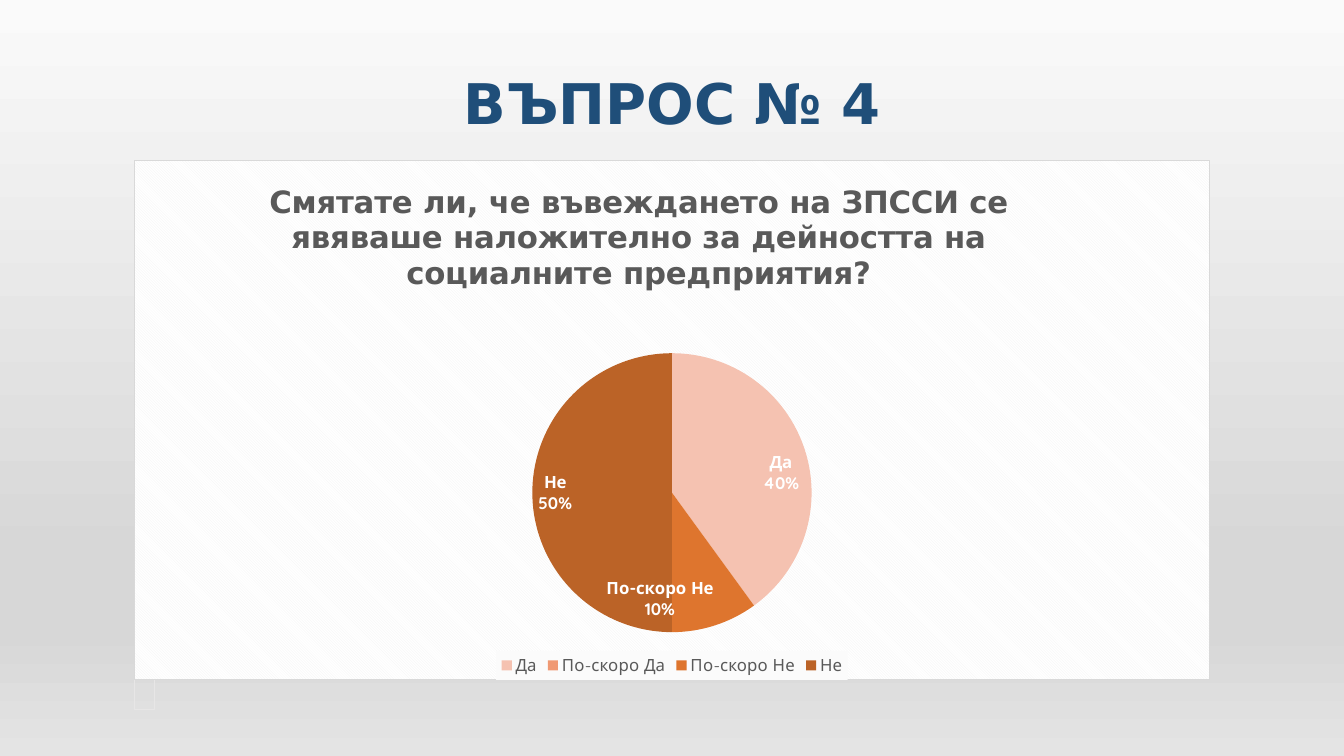
from lxml.etree import SubElement
from pptx import Presentation
from pptx.chart.data import CategoryChartData
from pptx.dml.color import RGBColor
from pptx.enum.chart import XL_CHART_TYPE as ChartType
from pptx.enum.chart import XL_LABEL_POSITION as LabelPosition
from pptx.enum.chart import XL_LEGEND_POSITION as LegendPosition
from pptx.enum.shapes import MSO_SHAPE as Shape
from pptx.enum.text import MSO_ANCHOR as Anchor
from pptx.enum.text import PP_ALIGN as Align
from pptx.oxml import parse_xml
from pptx.oxml.ns import nsdecls, qn
from pptx.util import Pt

WIDTH, HEIGHT = 960, 540


def color(value):
    return RGBColor.from_string(value)


def solid(value):
    return f'<a:solidFill><a:srgbClr val="{value}"/></a:solidFill>'


def place(element, **fractions):
    for old in element.findall(qn("c:layout")):
        element.remove(old)
    layout = parse_xml(f'<c:layout {nsdecls("c")}/>')
    manual = SubElement(layout, qn("c:manualLayout"))
    if "w" in fractions:
        SubElement(manual, qn("c:layoutTarget")).set("val", "inner")
    for axis in "xy":
        SubElement(manual, qn(f"c:{axis}Mode")).set("val", "edge")
    for key, value in fractions.items():
        SubElement(manual, qn(f"c:{key}")).set("val", str(value))
    return layout


class Deck:
    heading_font = "DejaVu Sans"
    chart_font = "Quicksand"
    heading_color = "1F4E79"
    text_color = "595959"

    def __init__(self):
        self.deck = Presentation()
        self.deck.slide_width, self.deck.slide_height = Pt(WIDTH), Pt(HEIGHT)
        self.slide = self.deck.slides.add_slide(self.deck.slide_layouts[6])

    def style(self, font, name, size, value, bold=False):
        font.name, font.size, font.bold = name, Pt(size), bold
        font.color.rgb = color(value)

    def rectangle(self, left, top, width, height, line=None):
        box = self.slide.shapes.add_shape(
            Shape.RECTANGLE, Pt(left), Pt(top), Pt(width), Pt(height))
        box.shadow.inherit = False
        box.fill.background()
        if line:
            box.line.color.rgb = color(line)
            box.line.width = Pt(0.75)
        else:
            box.line.fill.background()
        return box

    def backdrop(self, stops):
        box = self.rectangle(0, 0, WIDTH, HEIGHT)
        marks = "".join(
            f'<a:gs pos="{position * 1000}"><a:srgbClr val="{value}"/></a:gs>'
            for position, value in stops)
        gradient = parse_xml(
            f'<a:gradFill {nsdecls("a")} rotWithShape="1"><a:gsLst>{marks}</a:gsLst>'
            '<a:lin ang="5400000" scaled="0"/></a:gradFill>')
        properties = box._element.spPr
        properties.replace(properties.find(qn("a:noFill")), gradient)

    def heading(self, text, left, top, width, height):
        frame = self.slide.shapes.add_textbox(
            Pt(left), Pt(top), Pt(width), Pt(height)).text_frame
        frame.word_wrap = True
        frame.vertical_anchor = Anchor.BOTTOM
        paragraph = frame.paragraphs[0]
        paragraph.text = text
        paragraph.alignment = Align.CENTER
        paragraph.line_spacing = 0.9
        self.style(paragraph.font, self.heading_font, 40, self.heading_color, True)

    def pie(self, question, answers, left, top, width, height):
        data = CategoryChartData()
        data.categories = [answer for answer, _, _ in answers]
        data.add_series("Series 1", [share for _, share, _ in answers])
        chart = self.slide.shapes.add_chart(
            ChartType.PIE, Pt(left), Pt(top), Pt(width), Pt(height), data).chart
        self.style(chart.font, self.chart_font, 10, "000000")

        title = chart.chart_title
        paragraph = title.text_frame.paragraphs[0]
        paragraph.text = question
        paragraph.alignment = Align.CENTER
        self.style(paragraph.font, self.heading_font, 22, self.text_color, True)
        title.include_in_layout = False
        title._element.find(qn("c:tx")).addnext(place(title._element, x=0.12, y=0.03))

        chart.has_legend = True
        legend = chart.legend
        legend.position = LegendPosition.BOTTOM
        legend.include_in_layout = False
        self.style(legend.font, self.chart_font, 12, self.text_color)
        legend._element.find(qn("c:txPr")).addprevious(parse_xml(
            f'<c:spPr {nsdecls("c", "a")}>{solid("FBFBFB")}</c:spPr>'))

        plot = chart.plots[0]
        plot.vary_by_categories = True
        area = plot._element.getparent()
        area.insert(0, place(area, x=0.37, y=0.37, w=0.26, h=0.54))
        series = plot.series[0]
        for index, (_, _, value) in enumerate(answers):
            slice_format = series.points[index].format
            slice_format.fill.solid()
            slice_format.fill.fore_color.rgb = color(value)
            slice_format.line.fill.background()

        plot.has_data_labels = True
        labels = plot.data_labels
        labels.show_value = False
        labels.show_percentage = True
        labels.show_category_name = True
        labels.number_format, labels.number_format_is_linked = "0%", False
        labels.position = LabelPosition.INSIDE_END
        self.style(labels.font, self.chart_font, 12, "FFFFFF", True)

        chart._chartSpace.find(qn("c:chart")).addnext(parse_xml(
            f'<c:spPr {nsdecls("c", "a")}><a:pattFill prst="dkDnDiag">'
            '<a:fgClr><a:srgbClr val="F2F2F2"/></a:fgClr>'
            '<a:bgClr><a:srgbClr val="FFFFFF"/></a:bgClr></a:pattFill>'
            f'<a:ln w="{Pt(0.75)}">{solid("D9D9D9")}</a:ln></c:spPr>'))


def main():
    survey = Deck()
    survey.backdrop([(0, "FAFAFA"), (74, "D7D7D7"), (83, "D7D7D7"), (100, "E4E4E4")])
    survey.heading("ВЪПРОС № 4", 96, 32.4, 768, 69)
    survey.rectangle(96, 474, 14.4, 33, line="E7E6E6")
    survey.pie(
        "Смятате ли, че въвеждането на ЗПССИ се явяваше наложително "
        "за дейността на социалните предприятия?",
        [("Да", 40, "F5C2B1"), ("По-скоро Да", 0, "F09973"),
         ("По-скоро Не", 10, "DE752E"), ("Не", 50, "BB6327")],
        96, 114, 768, 372)
    survey.deck.save("out.pptx")


if __name__ == "__main__":
    main()
